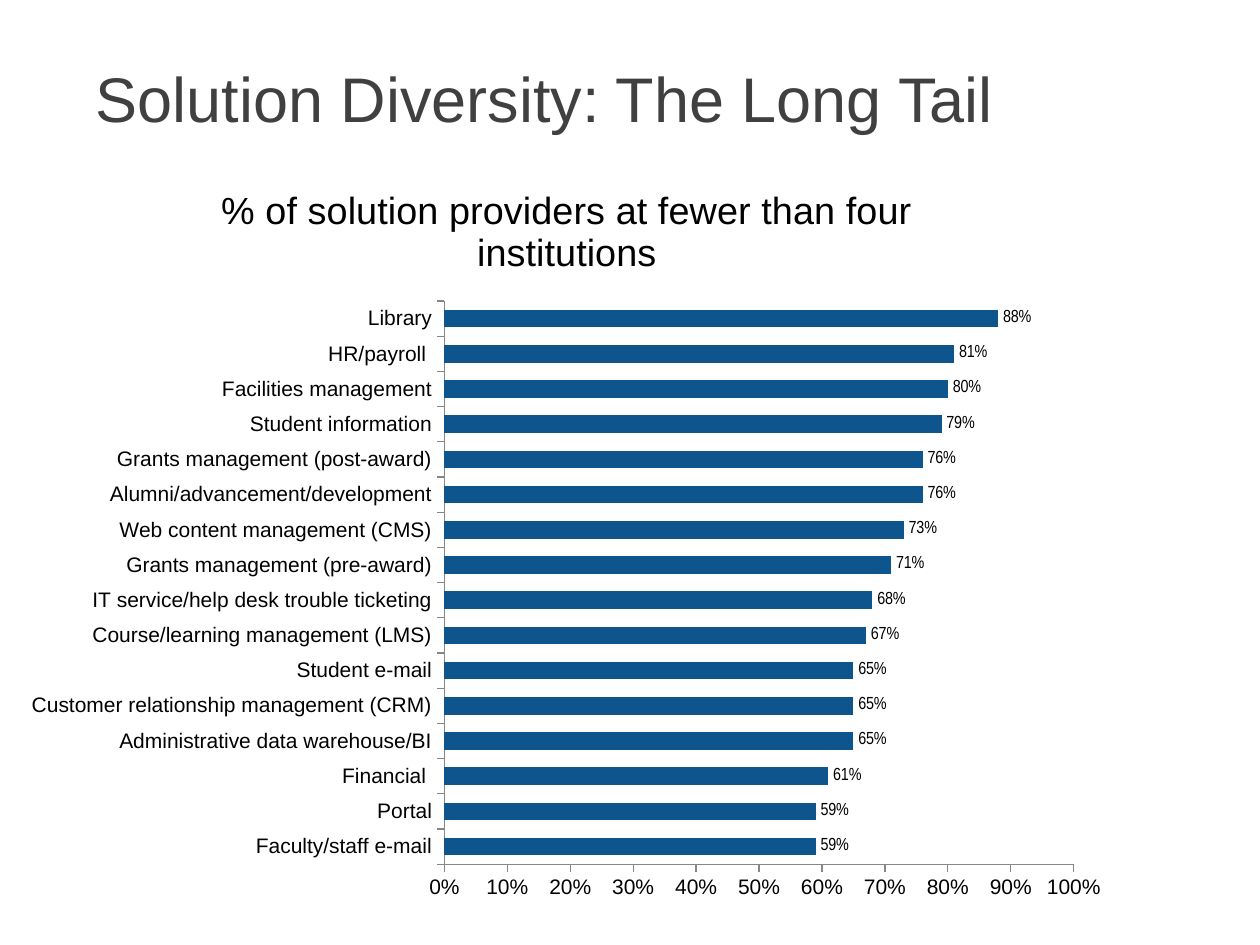
from lxml.etree import SubElement
from pptx import Presentation
from pptx.chart.data import CategoryChartData
from pptx.dml.color import RGBColor
from pptx.enum.chart import XL_CHART_TYPE, XL_LABEL_POSITION, XL_TICK_MARK
from pptx.enum.text import MSO_ANCHOR, PP_ALIGN
from pptx.oxml.ns import qn
from pptx.util import Inches, Pt

COLORS = {"title": "404040", "text": "000000", "bar": "0D558C", "axis": "878787"}

CHART_TITLE = "% of solution providers at fewer than four institutions"
# Bars run from the bottom of the chart to the top
SHARES = [
    ("Faculty/staff e-mail", 0.59),
    ("Portal", 0.59),
    ("Financial ", 0.61),
    ("Administrative data warehouse/BI", 0.65),
    ("Customer relationship management (CRM)", 0.65),
    ("Student e-mail", 0.65),
    ("Course/learning management (LMS)", 0.67),
    ("IT service/help desk trouble ticketing", 0.68),
    ("Grants management (pre-award)", 0.71),
    ("Web content management (CMS)", 0.73),
    ("Alumni/advancement/development", 0.76),
    ("Grants management (post-award)", 0.76),
    ("Student information", 0.79),
    ("Facilities management", 0.8),
    ("HR/payroll ", 0.81),
    ("Library", 0.88),
]


class SlideBuilder:
    def __init__(self, slide):
        self.slide = slide

    def color(self, name):
        return RGBColor.from_string(COLORS[name])

    def style(self, font, size, color="text", name="Arial"):
        font.name = name
        font.size = Pt(size)
        font.bold = False
        font.color.rgb = self.color(color)

    def add_title(self, text, left, top, width, height):
        title = self.slide.shapes.title
        title.left, title.top = Inches(left), Inches(top)
        title.width, title.height = Inches(width), Inches(height)
        frame = title.text_frame
        frame.word_wrap = True
        frame.vertical_anchor = MSO_ANCHOR.MIDDLE
        paragraph = frame.paragraphs[0]
        paragraph.alignment = PP_ALIGN.LEFT
        run = paragraph.add_run()
        run.text = text
        self.style(run.font, 36, "title")

    def format_axis(self, axis):
        axis.has_major_gridlines = False
        axis.major_tick_mark = XL_TICK_MARK.OUTSIDE
        axis.minor_tick_mark = XL_TICK_MARK.NONE
        axis.format.line.color.rgb = self.color("axis")
        axis.format.line.width = Pt(0.75)
        self.style(axis.tick_labels.font, 12)

    def place_plot(self, chart, x, y, w, h):
        plot_area = chart.element.find(".//" + qn("c:plotArea"))
        for old_layout in plot_area.findall(qn("c:layout")):
            plot_area.remove(old_layout)
        layout = SubElement(plot_area, qn("c:layout"))
        plot_area.insert(0, layout)
        manual = SubElement(layout, qn("c:manualLayout"))
        settings = {"layoutTarget": "inner", "xMode": "edge", "yMode": "edge",
                    "x": x, "y": y, "w": w, "h": h}
        for tag, value in settings.items():
            SubElement(manual, qn("c:" + tag)).set("val", str(value))

    def add_bar_chart(self, title, rows, left, top, width, height):
        data = CategoryChartData(number_format="0%")
        data.categories = [label for label, share in rows]
        data.add_series(title, [share for label, share in rows])
        chart = self.slide.shapes.add_chart(
            XL_CHART_TYPE.BAR_CLUSTERED, Inches(left), Inches(top),
            Inches(width), Inches(height), data).chart
        chart.has_legend = False
        self.style(chart.font, 18, name="Calibri")

        # Chart title
        chart.has_title = True
        run = chart.chart_title.text_frame.paragraphs[0].add_run()
        run.text = title
        self.style(run.font, 21.6)
        chart.chart_title.include_in_layout = False

        # Axes
        self.format_axis(chart.category_axis)
        value_axis = chart.value_axis
        self.format_axis(value_axis)
        value_axis.minimum_scale, value_axis.maximum_scale = 0, 1
        value_axis.major_unit = 0.1
        value_axis.tick_labels.number_format = "0%"
        value_axis.tick_labels.number_format_is_linked = False

        # Bars and their labels
        plot = chart.plots[0]
        plot.gap_width = 100
        plot.vary_by_categories = False
        series = plot.series[0]
        series.format.fill.solid()
        series.format.fill.fore_color.rgb = self.color("bar")
        labels = series.data_labels
        labels.show_value = True
        labels.number_format = "0%"
        labels.number_format_is_linked = False
        labels.position = XL_LABEL_POSITION.OUTSIDE_END
        self.style(labels.font, 10, name="Arial Narrow")
        return chart


def main():
    presentation = Presentation()
    presentation.slide_width, presentation.slide_height = Inches(10), Inches(7.5)
    slide = presentation.slides.add_slide(presentation.slide_layouts[5])
    builder = SlideBuilder(slide)
    builder.add_title("Solution Diversity: The Long Tail", 0.66, 0.37, 8.77, 0.8)
    chart = builder.add_bar_chart(CHART_TITLE, SHARES, 0.08, 1.25, 8.84, 6)
    builder.place_plot(chart, 0.39, 0.19, 0.565, 0.745)
    presentation.save("out.pptx")


if __name__ == "__main__":
    main()
